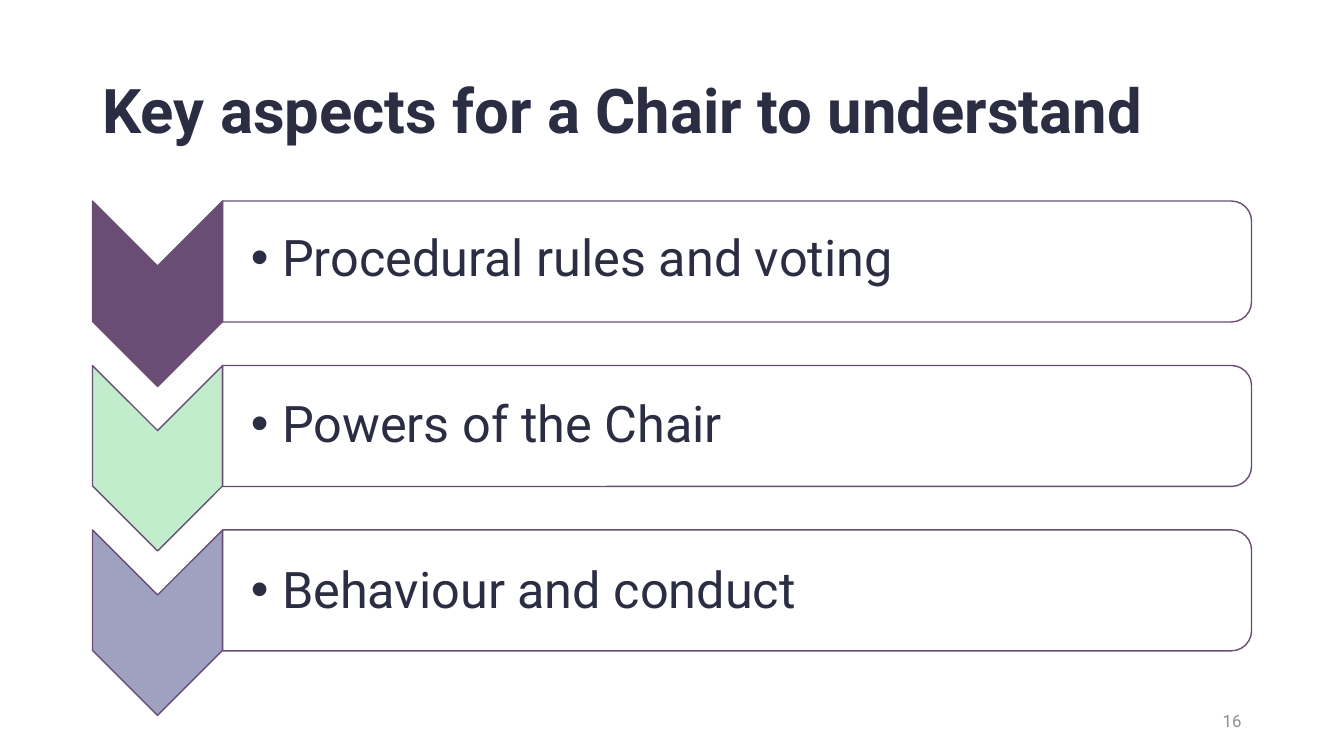
from dataclasses import dataclass
from typing import Any

import lxml.etree
import pptx
import pptx.dml.color
import pptx.enum.shapes
import pptx.enum.text
import pptx.oxml.ns
import pptx.util

RGB = pptx.dml.color.RGBColor.from_string
Pt = pptx.util.Pt
Inches = pptx.util.Inches
qn = pptx.oxml.ns.qn
Preset = pptx.enum.shapes.MSO_SHAPE
Align = pptx.enum.text.PP_ALIGN
MIDDLE = pptx.enum.text.MSO_ANCHOR.MIDDLE
NO_FIT = pptx.enum.text.MSO_AUTO_SIZE.NONE

SLIDE_W, SLIDE_H = Inches(13.33), Inches(7.5)


@dataclass(frozen=True)
class Theme:
    font: str = "Roboto"
    ink: str = "2B2D42"
    muted: str = "8F8F93"
    plum: str = "694D75"
    mint: str = "C1EDCC"
    lavender: str = "9EA1C0"
    white: str = "FFFFFF"
    title_size: float = 44
    item_size: float = 36
    number_size: float = 12
    outline: float = 1


@dataclass(frozen=True)
class Area:
    """A rectangle on a grid of 100 columns by 100 rows."""
    left: float
    top: float
    width: float
    height: float

    def frame(self) -> dict[str, int]:
        return {"left": round(self.left * SLIDE_W / 100),
                "top": round(self.top * SLIDE_H / 100),
                "width": round(self.width * SLIDE_W / 100),
                "height": round(self.height * SLIDE_H / 100)}


@dataclass(frozen=True)
class Aspect:
    text: str
    color: str


THEME = Theme()
ASPECTS = [Aspect("Procedural rules and voting", THEME.plum),
           Aspect("Powers of the Chair", THEME.mint),
           Aspect("Behaviour and conduct", THEME.lavender)]

MARGIN = 6.88
RIGHT = 100 - MARGIN
CHEVRON_W, CHEVRON_H = 9.68, 24.53
BAR_LEFT, BAR_H = MARGIN + CHEVRON_W, 16
FIRST_ROW, ROW_PITCH = 26.6, 21.75
LINE_SPACING = 0.9
ROBOTO_LINE = 1.17  # natural line height as a share of the type size


def apply(target: Any, values: dict[str, Any]) -> None:
    for name, value in values.items():
        setattr(target, name, value)


def write(paragraph: Any, text: str, size: float, color: str, bold: bool = False) -> None:
    run = paragraph.add_run()
    run.text = text
    apply(run.font, {"name": THEME.font, "size": Pt(size), "bold": bold})
    run.font.color.rgb = RGB(color)


def add_turned(slide: Any, preset: Any, area: Area, color: str, opacity: int = 100) -> None:
    """Draw a preset turned a quarter clockwise so that it covers the area."""
    box = area.frame()
    shift = (box["width"] - box["height"]) // 2
    shape = slide.shapes.add_shape(preset, box["left"] + shift, box["top"] - shift,
                                   box["height"], box["width"])
    shape.rotation = 90
    shape.shadow.inherit = False
    shape.fill.solid()
    shape.fill.fore_color.rgb = RGB(color)
    if opacity < 100:
        fill_color = shape.element.spPr.find(qn("a:solidFill")).find(qn("a:srgbClr"))
        lxml.etree.SubElement(fill_color, qn("a:alpha"), val=str(opacity * 1000))
    shape.line.color.rgb = RGB(THEME.plum)
    shape.line.width = Pt(THEME.outline)


def add_title(slide: Any, text: str) -> None:
    title = slide.shapes.title
    apply(title, Area(MARGIN, 5.33, RIGHT - MARGIN, 19.33).frame())
    apply(title.text_frame, {"vertical_anchor": MIDDLE, "word_wrap": True, "auto_size": NO_FIT})
    heading = title.text_frame.paragraphs[0]
    apply(heading, {"alignment": Align.LEFT, "line_spacing": LINE_SPACING})
    write(heading, text, THEME.title_size, THEME.ink, bold=True)


def add_aspects(slide: Any, aspects: list[Aspect]) -> None:
    """Draw a chevron and a bar per aspect, with one list running over the bars."""
    for index, aspect in enumerate(aspects):
        top = FIRST_ROW + index * ROW_PITCH
        add_turned(slide, Preset.CHEVRON, Area(MARGIN, top, CHEVRON_W, CHEVRON_H), aspect.color)
        add_turned(slide, Preset.ROUND_2_SAME_RECTANGLE,
                   Area(BAR_LEFT, top, RIGHT - BAR_LEFT, BAR_H), THEME.white, opacity=90)

    items = slide.placeholders[1]
    slide.shapes.element.append(items.element)  # in front of the bars
    rows_height = (len(aspects) - 1) * ROW_PITCH + BAR_H
    apply(items, Area(BAR_LEFT, FIRST_ROW, RIGHT - BAR_LEFT, rows_height).frame())
    frame = items.text_frame
    apply(frame, {"vertical_anchor": MIDDLE, "word_wrap": True, "auto_size": NO_FIT,
                  "margin_left": Inches(0.28), "margin_right": Inches(0.03),
                  "margin_top": Inches(0.03), "margin_bottom": Inches(0.03)})
    pitch = ROW_PITCH / 100 * SLIDE_H / Pt(1)
    gap = pitch - THEME.item_size * ROBOTO_LINE * LINE_SPACING
    for index, aspect in enumerate(aspects):
        item = frame.add_paragraph() if index else frame.paragraphs[0]
        properties = item._p.get_or_add_pPr()
        properties.set("marL", str(Inches(0.31)))
        properties.set("indent", str(-Inches(0.31)))
        lxml.etree.SubElement(properties, qn("a:buChar"), char="•")
        apply(item, {"alignment": Align.LEFT, "line_spacing": LINE_SPACING,
                     "space_before": Pt(gap if index else 0), "space_after": Pt(0)})
        write(item, aspect.text, THEME.item_size, THEME.ink)


def add_page_number(slide: Any, number: str) -> None:
    width = 22.5
    box = slide.shapes.add_textbox(**Area(RIGHT - width, 92.67, width, 5.33).frame())
    apply(box.text_frame, {"vertical_anchor": MIDDLE, "word_wrap": True})
    paragraph = box.text_frame.paragraphs[0]
    paragraph.alignment = Align.RIGHT
    write(paragraph, number, THEME.number_size, THEME.muted)


def main() -> None:
    deck = pptx.Presentation()
    apply(deck, {"slide_width": SLIDE_W, "slide_height": SLIDE_H})
    slide = deck.slides.add_slide(deck.slide_layouts[1])
    add_title(slide, "Key aspects for a Chair to understand")
    add_aspects(slide, ASPECTS)
    add_page_number(slide, "16")
    deck.save("out.pptx")


if __name__ == "__main__":
    main()
